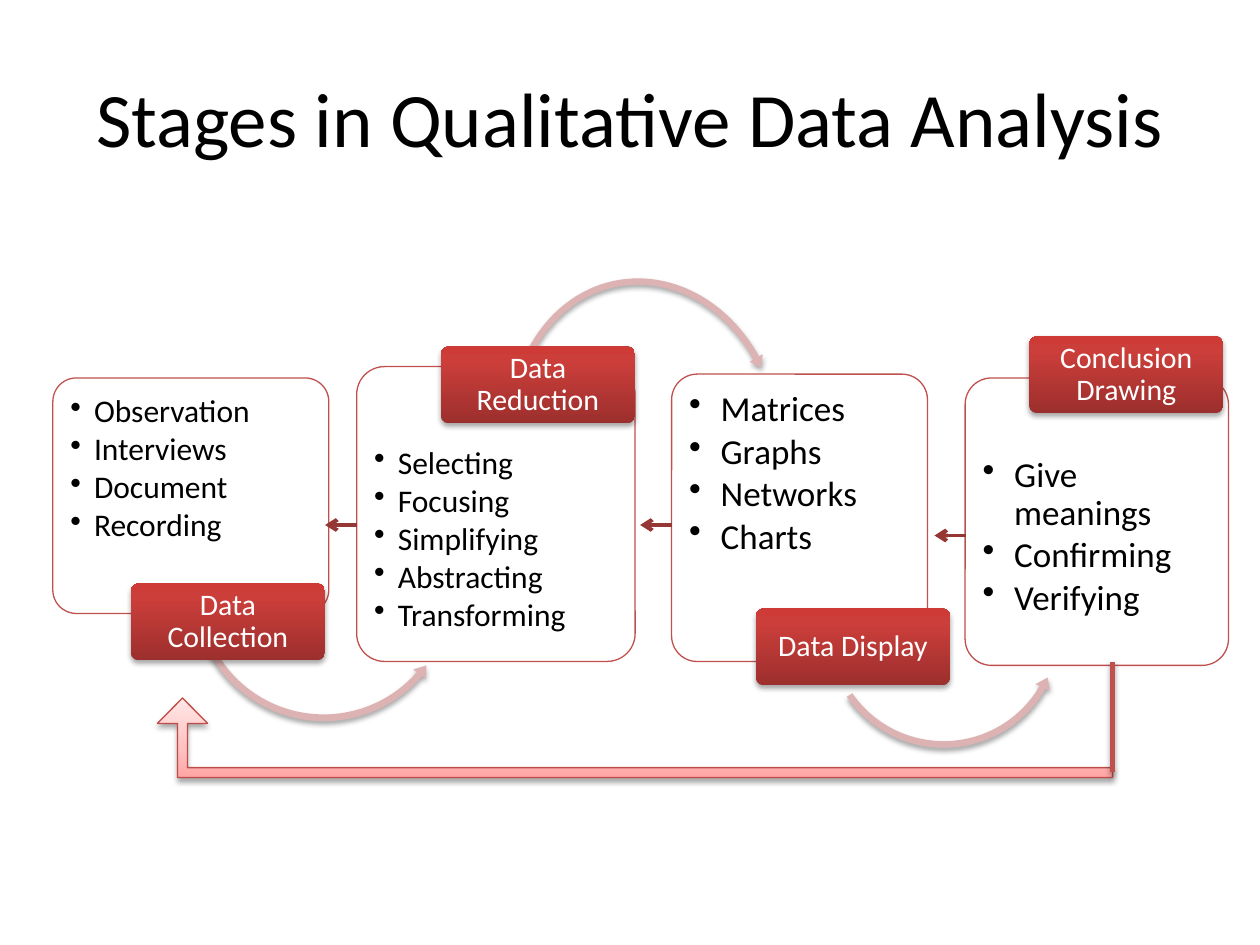
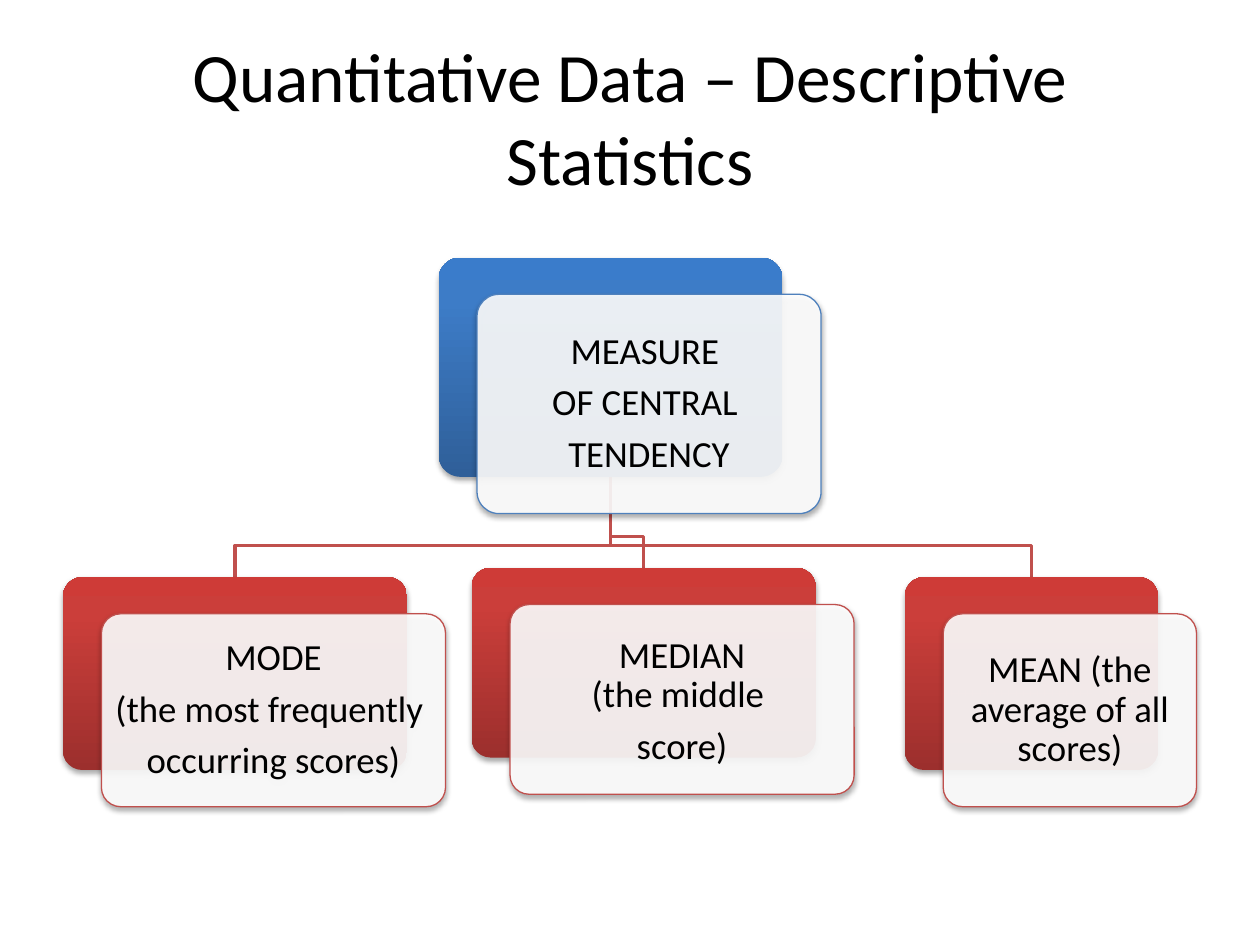
from collections import namedtuple

from lxml import etree
from pptx import Presentation
from pptx.dml.color import RGBColor
from pptx.enum.shapes import MSO_CONNECTOR, MSO_SHAPE
from pptx.enum.text import MSO_ANCHOR as ANCHOR, PP_ALIGN as ALIGN
from pptx.oxml.ns import qn
from pptx.util import Pt

FONT = "Calibri"
BLACK = RGBColor(0x00, 0x00, 0x00)
WHITE = RGBColor(0xFF, 0xFF, 0xFF)
RED = RGBColor(0xC0, 0x50, 0x4D)
DARK_RED = RGBColor(0x95, 0x37, 0x35)
LOOP_RED = RGBColor(0xBF, 0x4C, 0x48)
BLUE = RGBColor(0x4F, 0x81, 0xBD)
ARC_PINK = RGBColor(0xDC, 0xB3, 0xB2)

# Gradients run from the bottom edge to the top edge: (percent, colour)
RED_GRADIENT = ((0, RGBColor(0x9C, 0x2F, 0x2D)), (80, RGBColor(0xCB, 0x3E, 0x3A)),
                (100, RGBColor(0xCE, 0x3B, 0x37)))
BLUE_GRADIENT = ((0, RGBColor(0x2F, 0x5F, 0x99)), (80, RGBColor(0x3D, 0x7C, 0xC7)),
                 (100, RGBColor(0x3A, 0x7C, 0xCB)))
PINK_GRADIENT = ((0, RGBColor(0xFF, 0xA6, 0xA5)), (35, RGBColor(0xFF, 0xC0, 0xBF)),
                 (100, RGBColor(0xFF, 0xE7, 0xE7)))

CORNER = 0.1        # corner radius as a share of the shorter side
LABEL_SIZE = (110.9, 43.9)
CARD_SHIFT = (22, 21)   # offset of a front card from its backing
BEND_RISE = 18          # height of the branch bend above a child box

Box = namedtuple("Box", "left top width height")
Stage = namedtuple("Stage", "box items size indent text_top label label_offset arc")
Arc = namedtuple("Arc", "kind box rotation adjustments")

STAGES = (
    Stage(Box(30.2, 216, 157.7, 134.6),
          ("Observation", "Interviews", "Document", "Recording"), 18, 13.5, 0,
          "Data Collection", (44.6, 117.4),
          Arc(MSO_SHAPE.LEFT_CIRCULAR_ARROW, Box(108, 260.6, 154, 154), 10.8,
              (0.025, 3.009, 18.134, 87.615, 0.029))),
    Stage(Box(203.8, 209.5, 159.1, 168.5),
          ("Selecting", "Focusing", "Simplifying", "Abstracting", "Transforming"),
          18, 13.5, 36, "Data Reduction", (48.2, -11.5),
          Arc(MSO_SHAPE.CIRCULAR_ARROW, Box(289.4, 156.2, 159.1, 185), 349.4,
              (0.023, 2.76, 201.415, 131.685, 0.027))),
    Stage(Box(383.8, 213.8, 146.2, 164.2),
          ("Matrices", "Graphs", "Networks", "Charts"), 20, 18, 0,
          "Data Display", (48.2, 133.9),
          Arc(MSO_SHAPE.LEFT_CIRCULAR_ARROW, Box(469.4, 290.2, 139.7, 139.7), 5,
              (0.027, 3.345, 15.068, 84.214, 0.032))),
    Stage(Box(551.5, 216, 150.5, 164.2),
          ("Give meanings", "Confirming", "Verifying"), 20, 18, 35.3,
          "Conclusion Drawing", (36.7, -23.8), None),
)
BACK_ARROWS = ((203.8, 300), (383.8, 300), (552, 306))   # right end of each
BACK_ARROW_LENGTH = 18
LOOP_BOX = Box(90, 398.9, 545.8, 45.4)

ROOT = (Box(250.6, 147.2, 196.6, 125.3), ("MEASURE ", "OF CENTRAL ", "TENDENCY"))
MEASURES = (
    (Box(36, 329.8, 196.6, 110.2),
     ("MODE", "(the most frequently ", "occurring scores)")),
    (Box(269.5, 324.5, 196.6, 108.4), ("MEDIAN", "(the middle ", "score)")),
    (Box(517, 329.8, 144.7, 110.2), ("MEAN (the average of all scores)",)),
)


def points(values):
    return [Pt(value) for value in values]


def add_shadow(shape):
    properties = shape.element.spPr
    effects = properties.find(qn("a:effectLst"))
    shadow = etree.SubElement(effects, qn("a:outerShdw"), blurRad=str(Pt(3.1)),
                              dist=str(Pt(1.8)), dir="5400000", rotWithShape="0")
    colour = etree.SubElement(shadow, qn("a:srgbClr"), val="000000")
    etree.SubElement(colour, qn("a:alpha"), val="35000")


def fill_gradient(shape, stops):
    shape.fill.gradient()
    shape.fill.gradient_angle = 90
    stop_list = shape.element.spPr.find(".//" + qn("a:gsLst"))
    for old_stop in list(stop_list):
        stop_list.remove(old_stop)
    for percent, colour in stops:
        stop = etree.SubElement(stop_list, qn("a:gs"), pos=str(percent * 1000))
        etree.SubElement(stop, qn("a:srgbClr"), val=str(colour))


def add_preset(slide, kind, box, adjustments, line=None, shadow=False):
    shape = slide.shapes.add_shape(kind, *points(box))
    for index, value in enumerate(adjustments):
        shape.adjustments[index] = value
    if line is None:
        shape.line.fill.background()
    else:
        shape.line.color.rgb = line
        shape.line.width = Pt(0.75)
    shape.shadow.inherit = False
    if shadow:
        add_shadow(shape)
    return shape


def add_gradient_box(slide, box, stops):
    shape = add_preset(slide, MSO_SHAPE.ROUNDED_RECTANGLE, box, (CORNER,), shadow=True)
    fill_gradient(shape, stops)
    return shape


def add_white_card(slide, box, line, shadow=False):
    """Add a rounded card in white with 10 % transparency."""
    shape = add_preset(slide, MSO_SHAPE.ROUNDED_RECTANGLE, box, (CORNER,), line, shadow)
    shape.fill.solid()
    shape.fill.fore_color.rgb = WHITE
    colour = shape.element.spPr.find(qn("a:solidFill")).find(qn("a:srgbClr"))
    etree.SubElement(colour, qn("a:alpha"), val="90000")
    return shape


def write_text(shape, box, lines, size, colour, inset, spacing, text_top=0,
               anchor=ANCHOR.MIDDLE, alignment=ALIGN.CENTER):
    """Fill a rounded box with paragraphs; inset counts from its outer edge."""
    frame = shape.text_frame
    frame.word_wrap = True
    frame.vertical_anchor = anchor
    margin = max(0, inset - 0.29 * CORNER * min(box.width, box.height))
    frame.margin_left = frame.margin_right = frame.margin_bottom = Pt(margin)
    frame.margin_top = Pt(margin + text_top)
    for index, line in enumerate(lines):
        paragraph = frame.add_paragraph() if index else frame.paragraphs[0]
        paragraph.text = line
        paragraph.alignment = alignment
        paragraph.line_spacing = 0.9
        paragraph.space_after = Pt(round(size * spacing, 1))
        paragraph.font.name = FONT
        paragraph.font.size = Pt(size)
        paragraph.font.color.rgb = colour
    return frame


def add_bullet(paragraph, indent):
    properties = paragraph._p.get_or_add_pPr()
    properties.set("marL", str(Pt(indent)))
    properties.set("indent", str(-Pt(indent)))
    bullet = etree.Element(qn("a:buChar"), char="•")
    properties.find(qn("a:defRPr")).addprevious(bullet)


def add_line(slide, start, end, colour, width):
    line = slide.shapes.add_connector(MSO_CONNECTOR.STRAIGHT, *points(start + end))
    line.line.color.rgb = colour
    line.line.width = Pt(width)
    etree.SubElement(line.element.spPr, qn("a:effectLst"))
    return line


def add_title_slide(presentation, text, size):
    slide = presentation.slides.add_slide(presentation.slide_layouts[5])
    title = slide.shapes.title
    title.left, title.top, title.width, title.height = points((36, 21.6, 648, 90))
    title.text_frame.text = text
    title.text_frame.vertical_anchor = ANCHOR.MIDDLE
    paragraph = title.text_frame.paragraphs[0]
    paragraph.alignment = ALIGN.CENTER
    paragraph.font.name = FONT
    paragraph.font.size = Pt(size)
    paragraph.font.color.rgb = BLACK
    return slide


def add_stage(slide, stage):
    """Add a bulleted card, the arc leaving it and its label."""
    box = stage.box
    card = add_white_card(slide, box, RED)
    frame = write_text(card, box, stage.items, stage.size, BLACK, 10, 0.13,
                       stage.text_top, ANCHOR.TOP, ALIGN.LEFT)
    for paragraph in frame.paragraphs:
        add_bullet(paragraph, stage.indent)

    if stage.arc:
        arc = add_preset(slide, stage.arc.kind, stage.arc.box, stage.arc.adjustments,
                         shadow=True)
        arc.rotation = stage.arc.rotation
        arc.fill.solid()
        arc.fill.fore_color.rgb = ARC_PINK

    offset_x, offset_y = stage.label_offset
    label_box = Box(box.left + offset_x, box.top + offset_y, *LABEL_SIZE)
    label = add_gradient_box(slide, label_box, RED_GRADIENT)
    write_text(label, label_box, (stage.label,), 17, WHITE, 3.4, 0)


def add_back_arrow(slide, right, y):
    arrow = add_line(slide, (right, y), (right - BACK_ARROW_LENGTH, y), DARK_RED, 2.25)
    outline = arrow.element.spPr.find(qn("a:ln"))
    etree.SubElement(outline, qn("a:tailEnd"), type="arrow")


def add_feedback_loop(slide, box):
    """Lead from the last stage back under the first one."""
    arrow = add_preset(slide, MSO_SHAPE.BENT_UP_ARROW, box, (0.124, 0.315, 0.32),
                       LOOP_RED, shadow=True)
    arrow.element.spPr.find(qn("a:xfrm")).set("flipH", "1")
    fill_gradient(arrow, PINK_GRADIENT)
    right = box.left + box.width
    stem = add_line(slide, (right, 378), (right, 441.4), RED, 3)
    add_shadow(stem)


def add_branch(slide, parent, child):
    start_x = parent.left + parent.width / 2
    start_y = parent.top + parent.height
    end_x = child.left + child.width / 2
    bend_y = child.top - BEND_RISE
    builder = slide.shapes.build_freeform(Pt(start_x), Pt(start_y))
    corners = ((start_x, bend_y), (end_x, bend_y), (end_x, child.top))
    builder.add_line_segments([points(corner) for corner in corners], close=False)
    branch = builder.convert_to_shape()
    branch.fill.background()
    branch.line.color.rgb = RED
    branch.line.width = Pt(2)
    branch.shadow.inherit = False


def add_measure(slide, box, lines, stops, line_colour):
    """Add a coloured backing with a text card shifted in front of it."""
    add_gradient_box(slide, box, stops)
    shift_x, shift_y = CARD_SHIFT
    card_box = box._replace(left=box.left + shift_x, top=box.top + shift_y)
    card = add_white_card(slide, card_box, line_colour, shadow=True)
    return write_text(card, card_box, lines, 21, BLACK, 6.5, 0.33)


def build_stages_slide(presentation):
    slide = add_title_slide(presentation, "Stages in Qualitative Data Analysis", 44)
    for stage in STAGES:
        add_stage(slide, stage)
    for right, y in BACK_ARROWS:
        add_back_arrow(slide, right, y)
    add_feedback_loop(slide, LOOP_BOX)


def build_statistics_slide(presentation):
    slide = add_title_slide(presentation, "Quantitative Data – Descriptive Statistics", 39.6)
    root_box, root_lines = ROOT
    for box, _ in reversed(MEASURES):
        add_branch(slide, root_box, box)
    add_measure(slide, root_box, root_lines, BLUE_GRADIENT, BLUE)
    for box, lines in MEASURES:
        frame = add_measure(slide, box, lines, RED_GRADIENT, RED)
        if lines[0] == "MEDIAN":
            frame.paragraphs[0].line_spacing = 1.0
            frame.paragraphs[0].space_after = Pt(0)


def main():
    presentation = Presentation()
    presentation.slide_width, presentation.slide_height = Pt(720), Pt(540)
    build_stages_slide(presentation)
    build_statistics_slide(presentation)
    presentation.save("out.pptx")


if __name__ == "__main__":
    main()
